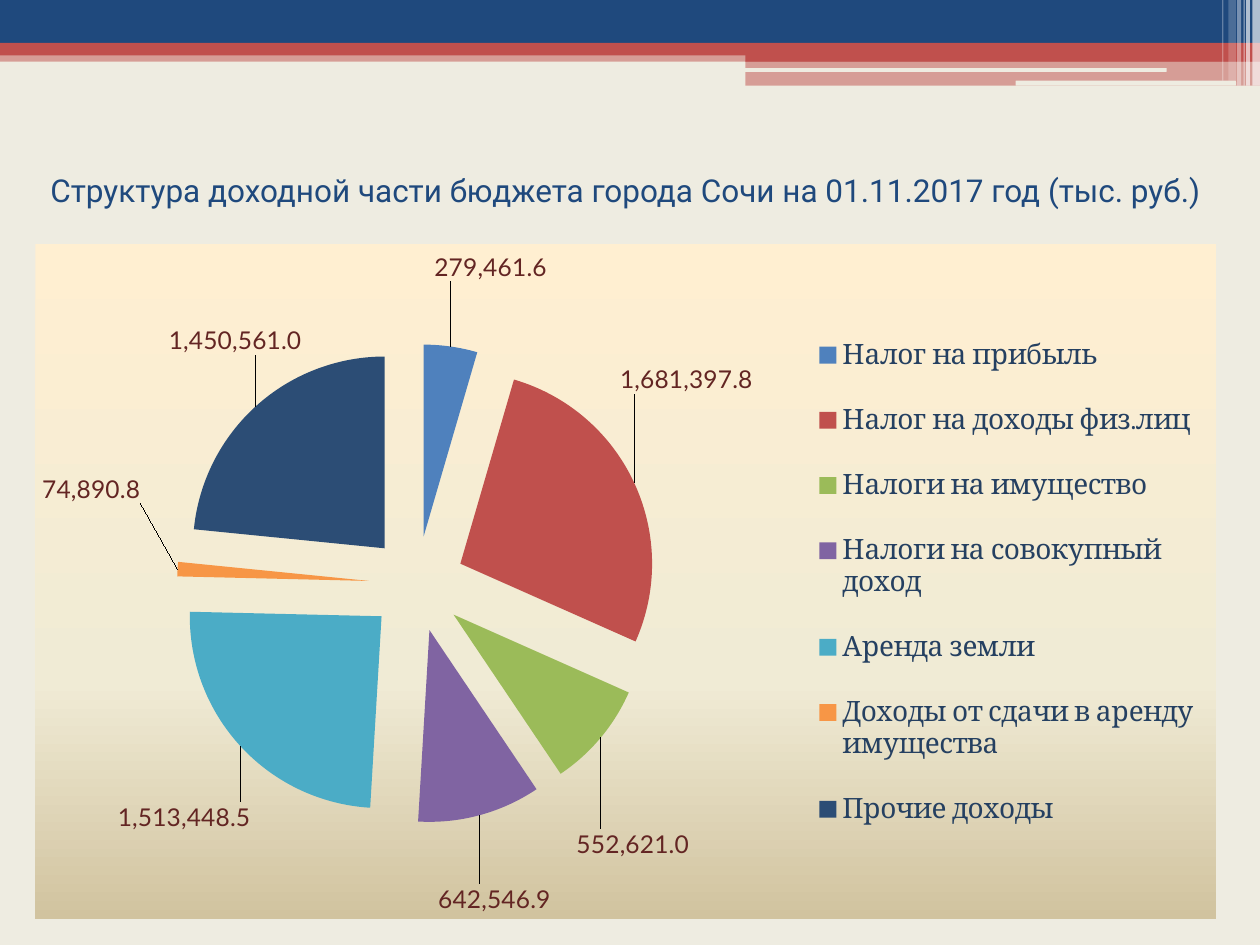
from typing import NamedTuple
from lxml.etree import _Element as Node
from pptx import Presentation
from pptx.chart.data import CategoryChartData as Data
from pptx.dml.color import RGBColor as RGB
from pptx.enum.chart import XL_CHART_TYPE as Kind, XL_LABEL_POSITION as Spot, XL_LEGEND_POSITION as Side
from pptx.enum.shapes import MSO_SHAPE as Form
from pptx.enum.text import MSO_ANCHOR as Anchor, PP_ALIGN as Align
from pptx.oxml import parse_xml
from pptx.oxml.ns import nsdecls, qn
from pptx.util import Pt

HUES = {
    "navy": "1F497D", "red": "C0504D", "cream": "EEECE1", "white": "FFFFFF",
    "label": "632523", "legend": "254061", "text": "000000",
    "top": "FFEFD1", "mid": "F0EBD5", "base": "D1C39F",
}
FORM = "#,##0.0"
WIDE, HIGH = 674.6, 385.2


class Bar(NamedTuple):
    left: float
    top: float
    width: float
    height: float
    hue: str
    alpha: int = 100
    form: Form = Form.RECTANGLE


class Part(NamedTuple):
    name: str
    value: float
    hue: str
    dx: float
    dy: float


BARS = [
    Bar(0, 28.8, 720, 6.5, "red", 50),
    Bar(0, 0, 720, 24.5, "navy"),
    Bar(0, 24.5, 720, 7.2, "red"),
    Bar(426, 28, 294, 7.2, "red"),
    Bar(426, 34.6, 294, 14.4, "red", 50),
    Bar(425.5, 38.9, 241.2, 2.2, "cream", form=Form.ROUNDED_RECTANGLE),
    Bar(580.3, 46.1, 126, 2.9, "cream", form=Form.ROUNDED_RECTANGLE),
    Bar(715.7, 0, 4.3, 49, "white", 65),
    Bar(712.1, 0, 2.2, 49, "white", 65),
    Bar(710.6, 0, 0.7, 49, "white", 60),
    Bar(707, 0, 2.2, 49, "white", 40),
    Bar(702, 0, 4.3, 46.1, "white", 20),
    Bar(698.4, 0, 0.7, 46.1, "white", 30),
]
PARTS = [
    Part("Налог на прибыль", 279461.6, "4F81BD", -10, -33),
    Part("Налог на доходы физ.лиц", 1681397.8, "C0504D", -12, -49),
    Part("Налоги на имущество", 552621.0, "9BBB59", -17, 49),
    Part("Налоги на совокупный доход", 642546.9, "8064A2", -25, 35),
    Part("Аренда земли", 1513448.5, "4BACC6", 9, 29),
    Part("Доходы от сдачи в аренду имущества", 74890.8, "F79646", -17, -46),
    Part("Прочие доходы", 1450561.0, "2C4D75", 29, -26),
]


def style(font, *, face: str, size: float, hue: str) -> None:
    font.name, font.size = face, Pt(size)
    font.color.rgb = RGB.from_string(HUES[hue])


def write(frame, text: str, *, align: Align = Align.CENTER, **look) -> None:
    line = frame.paragraphs[0]
    line.alignment = align
    run = line.add_run()
    run.text = text
    style(run.font, **look)


def draw(slide, bar: Bar) -> None:
    shape = slide.shapes.add_shape(
        bar.form, Pt(bar.left), Pt(bar.top), Pt(bar.width), Pt(bar.height))
    shape.shadow.inherit = False
    shape.line.fill.background()
    shape.fill.solid()
    shape.fill.fore_color.rgb = RGB.from_string(HUES[bar.hue])
    if bar.alpha < 100:
        tint = shape.fill._xPr.find(".//" + qn("a:srgbClr"))
        tint.append(parse_xml(f'<a:alpha {nsdecls("a")} val="{bar.alpha * 1000}"/>'))


def place(node: Node, slot: int, left: float, top: float,
          size: tuple[float, float] | None = None, inner: bool = False) -> None:
    for old in node.findall(qn("c:layout")):
        node.remove(old)
    tags = [("layoutTarget", "inner")] if inner else []
    if size:
        tags += [("xMode", "edge"), ("yMode", "edge")]
    tags += [("x", f"{left / WIDE:.4f}"), ("y", f"{top / HIGH:.4f}")]
    if size:
        tags += [("w", f"{size[0] / WIDE:.4f}"), ("h", f"{size[1] / HIGH:.4f}")]
    body = "".join(f'<c:{tag} val="{val}"/>' for tag, val in tags)
    node.insert(slot, parse_xml(
        f'<c:layout {nsdecls("c")}><c:manualLayout>{body}</c:manualLayout></c:layout>'))


def shade(chart) -> None:
    stops = "".join(
        f'<a:gs pos="{pos * 1000}"><a:srgbClr val="{HUES[hue]}"/></a:gs>'
        for pos, hue in ((0, "top"), (65, "mid"), (100, "base")))
    chart._chartSpace.find(qn("c:chart")).addnext(parse_xml(
        f'<c:spPr {nsdecls("c", "a")}><a:gradFill><a:gsLst>{stops}</a:gsLst>'
        '<a:lin ang="5400000" scaled="0"/></a:gradFill>'
        '<a:ln><a:noFill/></a:ln></c:spPr>'))


def mark(series, parts: list[Part]) -> None:
    look = dict(face="Lato", size=14, hue="label")
    labels = series.data_labels
    labels.show_value = True
    labels.number_format, labels.number_format_is_linked = FORM, False
    style(labels.font, **look)
    for num, part in enumerate(parts):
        point = series.points[num]
        point.format.fill.solid()
        point.format.fill.fore_color.rgb = RGB.from_string(part.hue)
        style(point.data_label.font, **look)
        point.data_label.position = Spot.OUTSIDE_END
    root = labels._element
    for node, part in zip(root.findall(qn("c:dLbl")), parts):
        place(node, 1, part.dx, part.dy)
    lead = root.find(qn("c:showLeaderLines"))
    if lead is None:
        lead = parse_xml(f'<c:showLeaderLines {nsdecls("c")}/>')
        root.append(lead)
    lead.set("val", "1")
    series._element.find(qn("c:tx")).addnext(
        parse_xml(f'<c:explosion {nsdecls("c")} val="25"/>'))


def plot(slide, parts: list[Part]) -> None:
    data = Data(number_format=FORM)
    data.categories = [part.name for part in parts]
    data.add_series("Series 1", [part.value for part in parts])
    chart = slide.shapes.add_chart(
        Kind.PIE, Pt(20.2), Pt(139.7), Pt(WIDE), Pt(HIGH), data).chart
    chart.has_title = False
    style(chart.font, face="Cambria", size=18, hue="text")
    chart.has_legend = True
    legend = chart.legend
    legend.position, legend.include_in_layout = Side.RIGHT, False
    style(legend.font, face="Cambria", size=16, hue="legend")
    place(legend._element, 1, 442, 35, (226, 316))
    pie = chart.plots[0]
    pie.vary_by_categories = True
    mark(pie.series[0], parts)
    place(chart._chartSpace.find(".//" + qn("c:plotArea")), 0, 81, 57, (274, 274), True)
    shade(chart)


def main() -> None:
    deck = Presentation()
    deck.slide_width, deck.slide_height = Pt(720), Pt(540)
    slide = deck.slides.add_slide(deck.slide_layouts[5])
    slide.background.fill.solid()
    slide.background.fill.fore_color.rgb = RGB.from_string(HUES["cream"])
    for bar in BARS:
        draw(slide, bar)
    title = slide.shapes.title
    title.left, title.top, title.width, title.height = Pt(20.2), Pt(66.2), Pt(674.6), Pt(84.2)
    title.text_frame.vertical_anchor = Anchor.MIDDLE
    title.text_frame.word_wrap = True
    write(title.text_frame,
          "Структура доходной части бюджета города Сочи на 01.11.2017 год (тыс. руб.)",
          face="Roboto", size=18, hue="navy")
    plot(slide, PARTS)
    deck.save("out.pptx")


if __name__ == "__main__":
    main()
